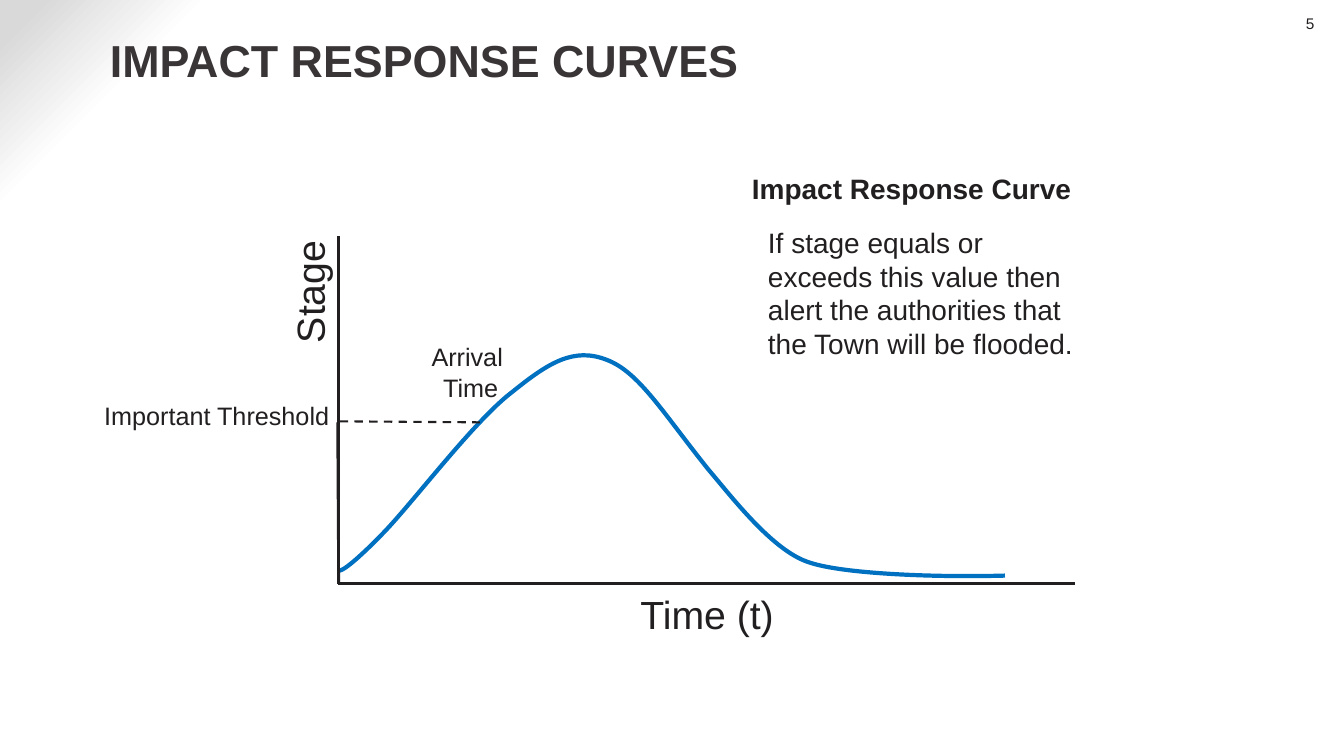
from dataclasses import dataclass
from pptx import Presentation
from pptx.dml.color import RGBColor as RGB
from pptx.enum.dml import MSO_LINE as Dash
from pptx.enum.shapes import MSO_CONNECTOR as Link
from pptx.enum.text import MSO_ANCHOR as Anchor, PP_ALIGN as Align
from pptx.oxml import parse_xml
from pptx.oxml.ns import nsdecls, qn
from pptx.util import Inches, Pt

CELL = Inches(0.1)  # grid pitch: all places are in columns and rows


@dataclass(frozen=True)
class Theme:
    font: str = "Arial"
    ink: str = "221F20"
    head: str = "393436"
    curve: str = "0070C0"
    paper: str = "FFFFFF"
    shade: str = "D9D9D9"
    title: int = 32
    axis: int = 28
    body: int = 20
    label: int = 18
    page: int = 11


def grid(*vals):
    return [round(v * CELL) for v in vals]


class Deck:
    def __init__(self, theme):
        self.theme = theme
        self.prs = Presentation()
        self.prs.slide_width, self.prs.slide_height = grid(133.33, 75)
        self.slide = self.prs.slides.add_slide(self.prs.slide_layouts[6])
        self.shapes = self.slide.shapes

    # Corner shading
    def back(self, stops):
        marks = "".join(
            f'<a:gs pos="{pos * 1000}"><a:srgbClr val="{tone}"/></a:gs>'
            for pos, tone in stops)
        node = parse_xml(
            f'<p:bg {nsdecls("p", "a")}><p:bgPr><a:gradFill rotWithShape="1">'
            f'<a:gsLst>{marks}</a:gsLst><a:path path="circle">'
            '<a:fillToRect l="100000" t="100000"/></a:path></a:gradFill>'
            '<a:effectLst/></p:bgPr></p:bg>')
        self.slide.element.cSld.insert(0, node)

    # Text box, one paragraph per line of text
    def text(self, at, lines, size, tone=None, bold=False,
             align=Align.LEFT, turn=0, **frame):
        box = self.shapes.add_textbox(*grid(*at))
        box.rotation = turn
        body = box.text_frame
        for key, val in {"word_wrap": True, **frame}.items():
            setattr(body, key, val)
        body.text = "\n".join(lines)
        look = {"name": self.theme.font, "size": Pt(size), "bold": bold}
        for par in body.paragraphs:
            par.alignment = align
            for run in par.runs:
                for key, val in look.items():
                    setattr(run.font, key, val)
                run.font.color.rgb = RGB.from_string(tone or self.theme.ink)

    def stroke(self, line, tone, width, dash=None):
        line.color.rgb = RGB.from_string(tone)
        for key, val in {"width": Pt(width), "dash_style": dash}.items():
            setattr(line, key, val)

    # Straight line
    def line(self, start, end, width=2, dash=None):
        link = self.shapes.add_connector(Link.STRAIGHT, *grid(*start, *end))
        link.element.spPr.append(parse_xml(f'<a:effectLst {nsdecls("a")}/>'))
        self.stroke(link.line, self.theme.ink, width, dash)

    # Smooth curve: a start point, then three points per Bezier piece
    def curve(self, points, tone, width):
        first, *rest = [grid(*p) for p in points]
        form = self.shapes.build_freeform(*first)
        form.add_line_segments(rest, close=False)
        shape = form.convert_to_shape()
        shape.shadow.inherit = False
        shape.fill.background()
        self.stroke(shape.line, tone, width)
        steps = list(shape.element.iter(qn("a:lnTo")))
        for i in range(0, len(steps), 3):
            bend = parse_xml(f'<a:cubicBezTo {nsdecls("a")}/>')
            steps[i].addprevious(bend)
            for step in steps[i:i + 3]:
                bend.append(step[0])
                step.getparent().remove(step)

    def save(self):
        self.prs.save("out.pptx")


def main():
    t = Theme()
    deck = Deck(t)
    deck.back([(87, t.paper), (90, t.paper), (98, t.shade)])

    # Page number and title
    flat = {"margin_top": 0, "margin_right": 0, "margin_bottom": 0}
    deck.text((124.4, 1.4, 6, 1.9), ["5"], t.page, align=Align.RIGHT, **flat)
    deck.text((10.4, 1.4, 108.6, 9.1), ["IMPACT RESPONSE CURVES"], t.title,
              t.head, True, margin_left=CELL // 2,
              vertical_anchor=Anchor.MIDDLE, **flat)

    # Axes and their names
    left, base = 33.6, 57.9
    deck.line((left, 23.4), (left, base))
    deck.line((left, base), (106.6, base))
    mid = {"align": Align.CENTER}
    deck.text((left, 58.1, 73.1, 5.7), ["Time (t)"], t.axis, **mid)
    deck.text((13.4, 26.1, 34.6, 5.7), ["Stage"], t.axis, turn=270, **mid)
    deck.line((33.5, base), (74.1, base))

    # Stage curve
    deck.text((39, 33.4, 15.4, 7.1), ["Arrival ", "Time"], t.label, **mid)
    deck.curve([(33.7, 56.6),
                (34, 56.6), (35.3, 55.7), (38.1, 52.8),
                (41, 49.8), (47.1, 41.7), (50.8, 38.9),
                (54.4, 36), (56.9, 34.4), (60.2, 35.7),
                (63.4, 36.9), (65.8, 41), (70.3, 46.6),
                (72.6, 49.3), (76.7, 54.7), (80.3, 55.8),
                (83.5, 56.9), (92.4, 57.3), (99.7, 57.1)], t.curve, 3)

    # Threshold
    deck.line((33.5, 41.9), (left, base))
    deck.line((33.7, 41.8), (47.6, 41.9), 1.5, Dash.DASH)
    deck.text((4.8, 39.2, 33.4, 4), ["Important Threshold"], t.label, **mid)

    # Explanation
    deck.text((73.6, 16.5, 33.9, 4.4), ["Impact Response Curve"], t.body,
              bold=True)
    deck.text((75.2, 21.9, 33.9, 14.5),
              ["If stage equals or exceeds this value then alert the "
               "authorities that the Town will be flooded."], t.body)
    deck.save()


if __name__ == "__main__":
    main()
